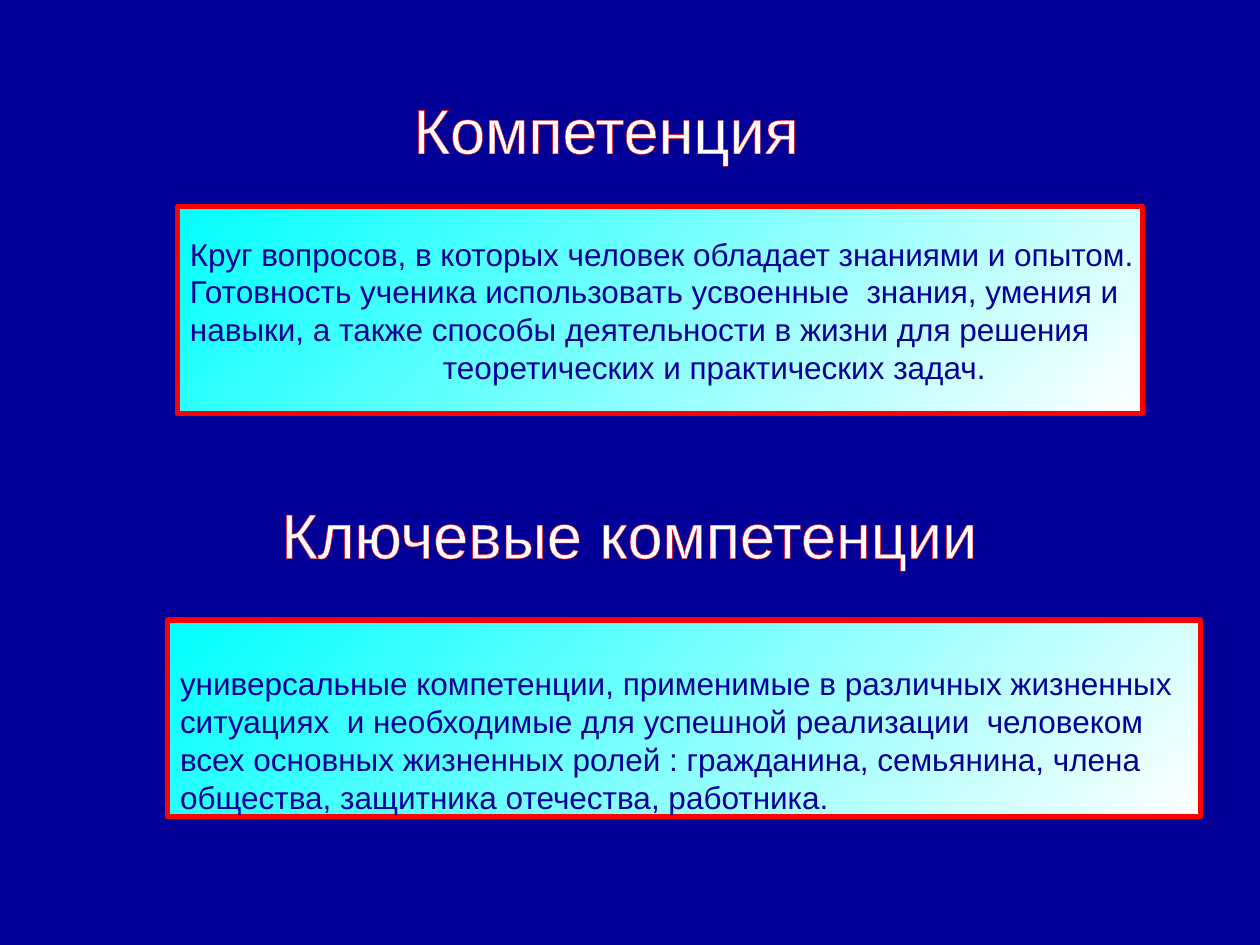
import dataclasses

import lxml.etree
import pptx
import pptx.dml.color
import pptx.enum.shapes
import pptx.enum.text
import pptx.oxml.ns
import pptx.util

Cm = pptx.util.Cm
Pt = pptx.util.Pt
RGBColor = pptx.dml.color.RGBColor
Align = pptx.enum.text.PP_ALIGN
Anchor = pptx.enum.text.MSO_ANCHOR


@dataclasses.dataclass(frozen=True)
class Theme:
    font: str = "Arial"
    background: str = "000099"
    heading: str = "FFFFFF"
    accent: str = "FF0000"
    gradient: tuple = ("00FFFF", "FFFFFF")
    body: str = "000099"
    heading_size: int = 36
    body_size: int = 18
    border_width: int = 3
    outline_width: int = 1


def outline_text(run, color, width):
    """Draw a coloured contour around the letters of a run."""
    properties = run.font._element
    line = lxml.etree.Element(pptx.oxml.ns.qn("a:ln"), w=str(Pt(width)))
    fill = lxml.etree.SubElement(line, pptx.oxml.ns.qn("a:solidFill"))
    lxml.etree.SubElement(fill, pptx.oxml.ns.qn("a:srgbClr"), val=color)
    properties.insert(0, line)


def write_text(paragraph, text, *, font, size, color, align=Align.LEFT, indent=0):
    """Add a formatted run; indent is the left margin in centimetres."""
    paragraph.alignment = align
    if indent:
        paragraph._p.get_or_add_pPr().set("marL", str(Cm(indent)))
    run = paragraph.add_run()
    run.text = text
    run.font.name = font
    run.font.size = Pt(size)
    run.font.color.rgb = RGBColor.from_string(color)
    return run


class SlideBuilder:
    def __init__(self, slide, theme):
        self.slide = slide
        self.theme = theme

    def paint_background(self):
        fill = self.slide.background.fill
        fill.solid()
        fill.fore_color.rgb = RGBColor.from_string(self.theme.background)

    def title(self, text, left, top, width, height):
        shape = self.slide.shapes.title
        shape.left, shape.top = Cm(left), Cm(top)
        shape.width, shape.height = Cm(width), Cm(height)
        self.format_heading(shape, text)

    def heading(self, text, left, top, width, height):
        shape = self.slide.shapes.add_textbox(Cm(left), Cm(top), Cm(width), Cm(height))
        self.format_heading(shape, text)

    def format_heading(self, shape, text):
        theme = self.theme
        frame = shape.text_frame
        frame.word_wrap = True
        frame.auto_size = pptx.enum.text.MSO_AUTO_SIZE.NONE
        frame.vertical_anchor = Anchor.TOP
        frame.margin_top, frame.margin_bottom = Cm(0.26), 0
        run = write_text(frame.paragraphs[0], text, font=theme.font, size=theme.heading_size,
                         color=theme.heading, align=Align.CENTER)
        outline_text(run, theme.accent, theme.outline_width)

    def card(self, lines, left, top, width, height, *, margin_top=0, last_indent=0):
        theme = self.theme
        shape = self.slide.shapes.add_shape(
            pptx.enum.shapes.MSO_SHAPE.RECTANGLE, Cm(left), Cm(top), Cm(width), Cm(height))
        shape.shadow.inherit = False
        shape.fill.gradient()
        shape.fill.gradient_angle = 315
        for stop, color in zip(shape.fill.gradient_stops, theme.gradient):
            stop.color.rgb = RGBColor.from_string(color)
        shape.line.color.rgb = RGBColor.from_string(theme.accent)
        shape.line.width = Pt(theme.border_width)

        frame = shape.text_frame
        frame.word_wrap = True
        frame.vertical_anchor = Anchor.MIDDLE
        frame.margin_left, frame.margin_right = Cm(0.25), 0
        frame.margin_top, frame.margin_bottom = Cm(margin_top), 0
        for number, line in enumerate(lines, start=1):
            paragraph = frame.paragraphs[0] if number == 1 else frame.add_paragraph()
            write_text(paragraph, line, font=theme.font, size=theme.body_size,
                       color=theme.body, indent=last_indent if number == len(lines) else 0)


def main():
    presentation = pptx.Presentation()
    presentation.slide_width, presentation.slide_height = Cm(25.4), Cm(19.05)
    slide = presentation.slides.add_slide(presentation.slide_layouts.get_by_name("Title Only"))
    builder = SlideBuilder(slide, Theme())

    builder.paint_background()
    builder.title("Компетенция", 6.76, 1.57, 10.92, 1.4)
    builder.card([
        "Круг вопросов, в которых человек обладает знаниями и опытом.",
        "Готовность ученика использовать усвоенные  знания, умения и",
        "навыки, а также способы деятельности в жизни для решения",
        "теоретических и практических задач.",
    ], 3.58, 4.17, 19.46, 4.17, last_indent=5.1)
    builder.card([
        "универсальные компетенции, применимые в различных жизненных",
        "ситуациях  и необходимые для успешной реализации  человеком",
        "всех основных жизненных ролей : гражданина, семьянина, члена",
        "общества, защитника отечества, работника.",
    ], 3.38, 12.5, 20.83, 3.96, margin_top=0.88)
    builder.heading("Ключевые компетенции", 4.75, 9.73, 15.88, 1.4)

    presentation.save("out.pptx")


if __name__ == "__main__":
    main()
